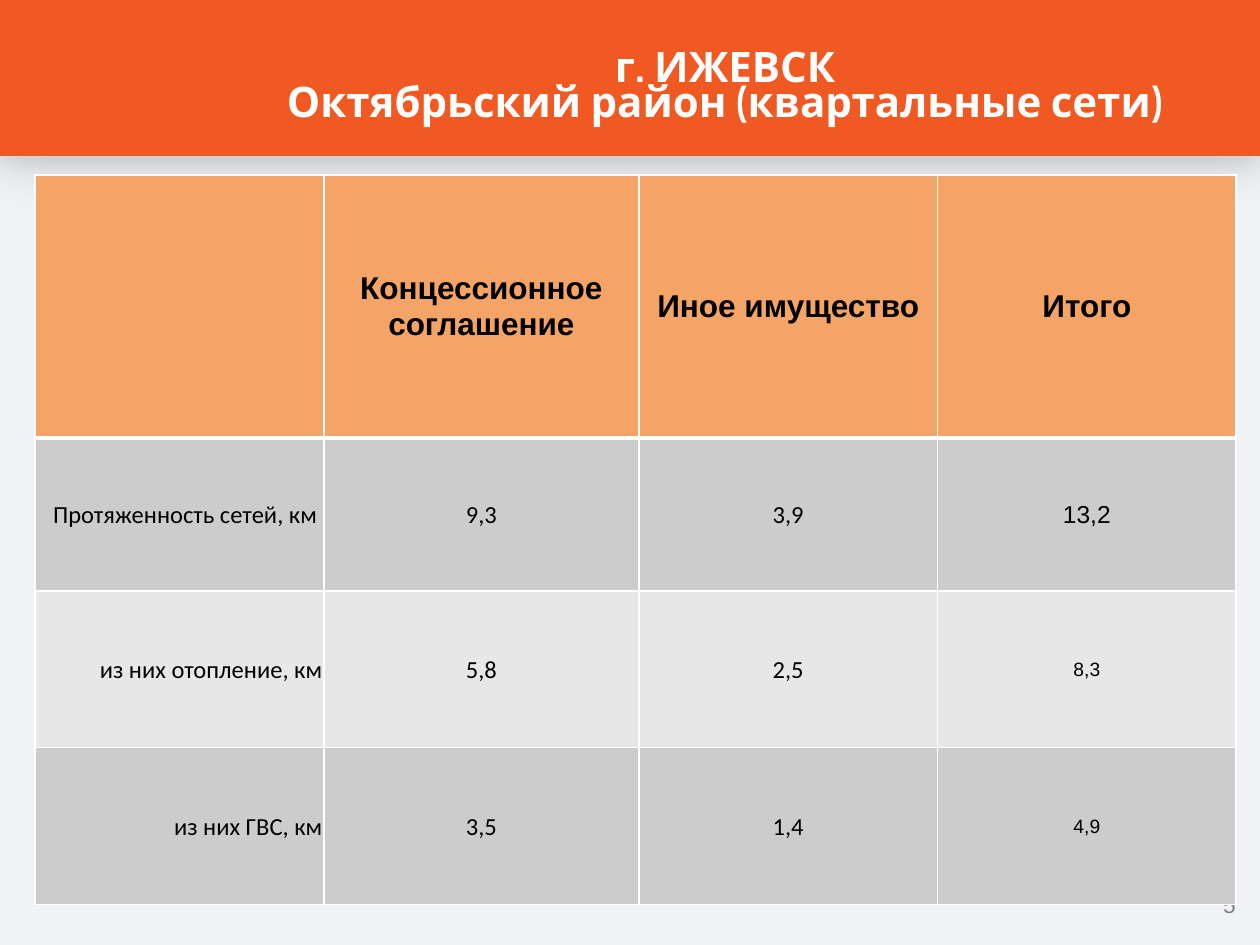
import pptx
import pptx.util
import pptx.dml.color
import pptx.enum.shapes
import pptx.enum.text
import pptx.oxml
import pptx.oxml.ns

Cm = pptx.util.Cm
RGBColor = pptx.dml.color.RGBColor
Align = pptx.enum.text.PP_ALIGN
Anchor = pptx.enum.text.MSO_ANCHOR

ORANGE = RGBColor(0xF1, 0x59, 0x22)
PEACH = RGBColor(0xF4, 0xA4, 0x67)
PALE = RGBColor(0xF0, 0xF2, 0xF5)
DARK = RGBColor(0xCC, 0xCC, 0xCC)
LIGHT = RGBColor(0xE7, 0xE7, 0xE7)
GREY = RGBColor(0x80, 0x80, 0x80)
WHITE = RGBColor(0xFF, 0xFF, 0xFF)
BLACK = RGBColor(0, 0, 0)

NS = pptx.oxml.ns.nsdecls("a")


def write(frame, text, font="Arial", size=14, color=BLACK, bold=False,
          align=Align.CENTER, lead=None):
    """Fill a text frame, one paragraph for each line of text."""
    for i, line in enumerate(text.split("\n")):
        para = frame.paragraphs[0] if i == 0 else frame.add_paragraph()
        para.alignment = align
        if lead:
            para.line_spacing = lead
        run = para.add_run()
        run.text = line
        run.font.name = font
        run.font.size = pptx.util.Pt(size)
        run.font.bold = bold
        run.font.color.rgb = color


class Page:
    def __init__(self, deck):
        self.slide = deck.slides.add_slide(deck.slide_layouts[6])
        self.shapes = self.slide.shapes

    def panel(self, left, top, width, height, fill, shade=None):
        """Plain rectangle; shade is alpha in %, blur and distance in pt."""
        box = self.shapes.add_shape(
            pptx.enum.shapes.MSO_SHAPE.RECTANGLE,
            Cm(left), Cm(top), Cm(width), Cm(height))
        box.shadow.inherit = False
        box.fill.solid()
        box.fill.fore_color.rgb = fill
        box.line.fill.background()
        if shade:
            alpha, blur, dist = shade
            glow = pptx.oxml.parse_xml(
                f'<a:outerShdw {NS} blurRad="{blur * 12700}" '
                f'dist="{dist * 12700}" dir="5400000" rotWithShape="0">'
                f'<a:srgbClr val="000000"><a:alpha val="{alpha * 1000}"/>'
                '</a:srgbClr></a:outerShdw>')
            box._element.spPr.find(pptx.oxml.ns.qn("a:effectLst")).append(glow)

    def label(self, left, top, width, height, text, inset=0, **style):
        box = self.shapes.add_textbox(
            Cm(left), Cm(top), Cm(width), Cm(height))
        frame = box.text_frame
        frame.word_wrap = True
        frame.margin_left = frame.margin_right = frame.margin_bottom = 0
        frame.margin_top = Cm(inset)
        write(frame, text, **style)

    def table(self, left, top, cols, rows):
        grid = self.shapes.add_table(
            len(rows), len(cols), Cm(left), Cm(top),
            Cm(sum(cols)), Cm(sum(rows))).table
        grid.first_row = grid.horz_banding = False
        for col, width in zip(grid.columns, cols):
            col.width = Cm(width)
        for row, height in zip(grid.rows, rows):
            row.height = Cm(height)
        return grid

    def cell(self, cell, text, fill, edges, pad=None, **style):
        """Cell with white borders; edges gives widths for L, R, T, B."""
        cell.vertical_anchor = Anchor.MIDDLE
        if pad is not None:
            cell.margin_left = Cm(pad)
            cell.margin_right = cell.margin_top = Cm(0.03)
            cell.margin_bottom = 0
        if text:
            write(cell.text_frame, text, **style)
        props = cell._tc.get_or_add_tcPr()
        for side, width in zip("LRTB", edges):
            props.append(pptx.oxml.parse_xml(
                f'<a:ln{side} {NS} w="{width * 12700}"><a:solidFill>'
                f'<a:srgbClr val="{WHITE}"/></a:solidFill></a:ln{side}>'))
        cell.fill.solid()
        cell.fill.fore_color.rgb = fill


def main():
    deck = pptx.Presentation()
    deck.slide_width, deck.slide_height = Cm(25.4), Cm(19.05)
    page = Page(deck)

    # Background and title band
    page.panel(-0.03, 0, 25.45, 19.05, PALE)
    page.panel(-0.03, -0.03, 25.45, 3.2, WHITE, shade=(8, 15, 1))
    page.panel(-0.03, -0.05, 25.45, 3.2, ORANGE, shade=(17, 29, 3))

    # Page number and title
    page.label(23.67, 17.96, 1.24, 0.56, "5", size=13, color=GREY,
               align=Align.RIGHT)
    page.label(3.91, 0, 21.41, 3.33,
               "г. ИЖЕВСК\nОктябрьский район (квартальные сети)",
               inset=1.09, font="Cabin", size=24, color=WHITE, bold=True,
               lead=0.7)

    # Table of network lengths
    heads = ["", "Концессионное соглашение", "Иное имущество", "Итого"]
    data = [
        ("Протяженность сетей, км", "9,3", "3,9", "13,2"),
        ("из них отопление, км", "5,8", "2,5", "8,3"),
        ("из них ГВС, км", "3,5", "1,4", "4,9"),
    ]
    grid = page.table(0.71, 3.53, [5.82, 6.35, 6.02, 6.02],
                      [5.3, 3.08, 3.16, 3.16])
    for c, head in enumerate(heads):
        page.cell(grid.cell(0, c), head, PEACH, (1, 1, 1, 3),
                  size=18, bold=True)
    for r, row in enumerate(data, 1):
        total = r == 1
        for c, text in enumerate(row):
            style = {"font": "Calibri", "pad": 0.03}
            if c == 0:
                style["align"] = Align.LEFT if total else Align.RIGHT
                style["pad"] = 0.36 if total else 0.03
            elif c == len(row) - 1:
                style.update(font="Arial", size=14 if total else 11)
            page.cell(grid.cell(r, c), text, DARK if r % 2 else LIGHT,
                      (1, 1, 3 if total else 1, 1), **style)

    deck.save("out.pptx")


if __name__ == "__main__":
    main()
